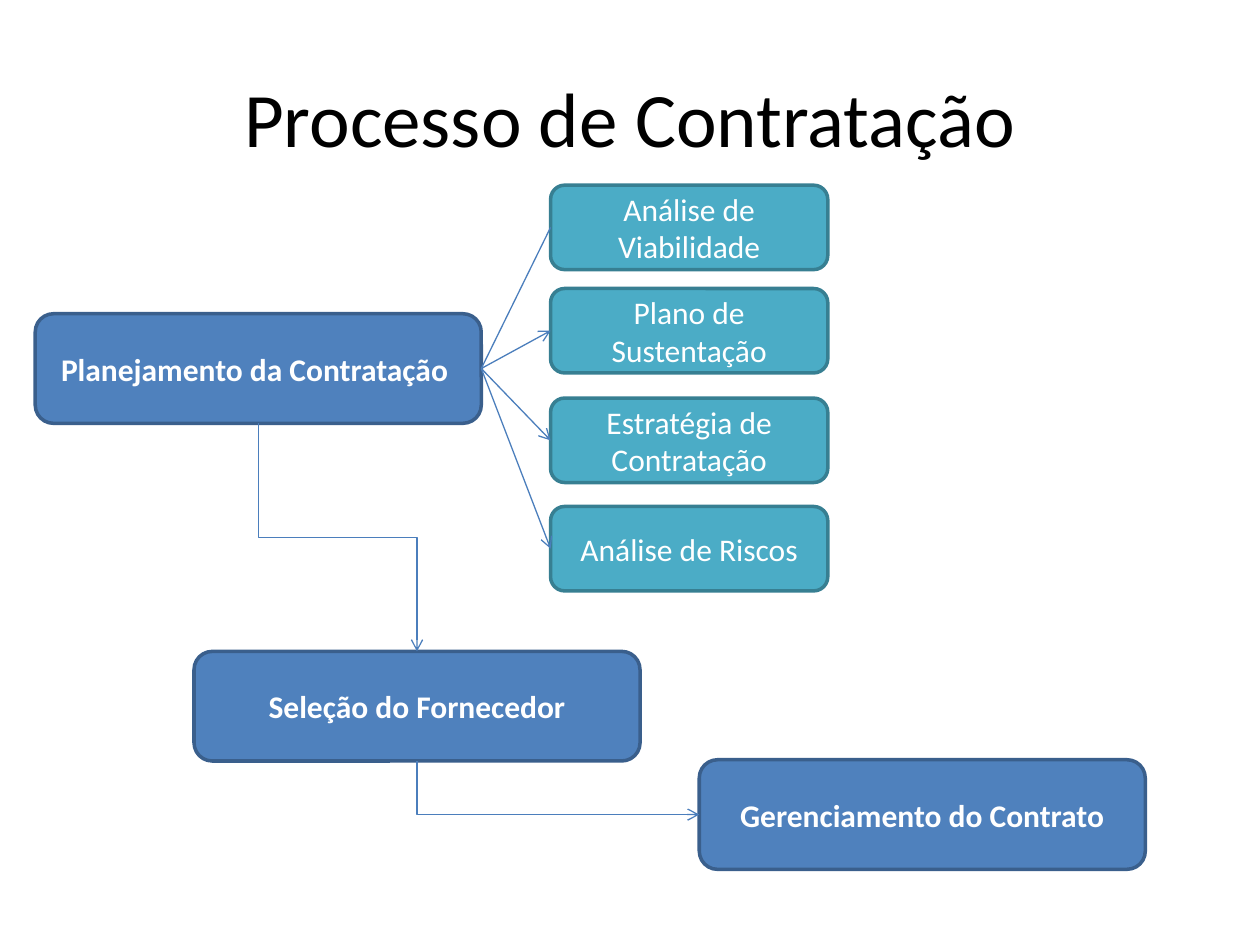
from lxml.etree import SubElement
from pptx import Presentation
from pptx.dml.color import RGBColor
from pptx.enum.shapes import MSO_CONNECTOR, MSO_SHAPE
from pptx.enum.text import MSO_ANCHOR, PP_ALIGN
from pptx.oxml.ns import qn
from pptx.util import Inches, Pt

COLORS = {
    "title": "000000",
    "text": "FFFFFF",
    "stage": "4F81BD",
    "stage_line": "3A5F8C",
    "document": "4BACC6",
    "document_line": "377F92",
    "connector": "4B7EBC",
}
FONT = "Calibri"
TOP, LEFT, BOTTOM, RIGHT = range(4)  # connection sites of a box

STAGE_SIZE = (3.54, 0.87)
STAGES = [
    ("Planejamento da Contratação ", 0.28, 2.49),
    ("Seleção do Fornecedor", 1.54, 5.17),
    ("Gerenciamento do Contrato", 5.55, 6.03),
]
DOCUMENT_SIZE = (2.2, 0.67)
DOCUMENT_LEFT = 4.37
DOCUMENTS = [
    ("Análise de Viabilidade", 1.47),
    ("Plano de Sustentação", 2.29),
    ("Estratégia de Contratação", 3.16),
    ("Análise de Riscos", 4.02),
]


def rgb(name):
    return RGBColor.from_string(COLORS[name])


def format_text(text_frame, size, color, bold=False):
    text_frame.word_wrap = True
    text_frame.vertical_anchor = MSO_ANCHOR.MIDDLE
    paragraph = text_frame.paragraphs[0]
    paragraph.alignment = PP_ALIGN.CENTER
    font = paragraph.runs[0].font
    font.name, font.size, font.bold = FONT, Pt(size), bold
    font.color.rgb = rgb(color)


def add_title(slide, left, top, width, height):
    title = slide.shapes.title
    title.left, title.top = Inches(left), Inches(top)
    title.width, title.height = Inches(width), Inches(height)
    title.text_frame.text = "Processo de Contratação"
    format_text(title.text_frame, 44, "title")


def add_box(slide, text, left, top, size, kind, bold=False):
    width, height = size
    shape = slide.shapes.add_shape(
        MSO_SHAPE.FLOWCHART_ALTERNATE_PROCESS,
        Inches(left), Inches(top), Inches(width), Inches(height))
    shape.shadow.inherit = False
    shape.fill.solid()
    shape.fill.fore_color.rgb = rgb(kind)
    shape.line.color.rgb = rgb(kind + "_line")
    shape.line.width = Pt(2)
    shape.text_frame.text = text
    format_text(shape.text_frame, 18, "text", bold)
    return shape


def connect(slide, kind, source, source_site, target, target_site, arrow=True):
    connector = slide.shapes.add_connector(kind, 0, 0, 0, 0)
    connector.begin_connect(source, source_site)
    connector.end_connect(target, target_site)
    connector.line.color.rgb = rgb("connector")
    connector.line.width = Pt(0.75)
    properties = connector.element.spPr
    if arrow:
        SubElement(properties.find(qn("a:ln")), qn("a:tailEnd"), type="arrow")
    SubElement(properties, qn("a:effectLst"))
    return connector


def connect_downward(slide, source, target, target_site, preset):
    """Elbow that leaves the bottom of source: turned 270 degrees and flipped."""
    connector = connect(slide, MSO_CONNECTOR.ELBOW, source, BOTTOM, target, target_site)
    left, top = connector.left, connector.top
    width, height = connector.width, connector.height
    connector.left = left + (width - height) // 2
    connector.top = top + (height - width) // 2
    connector.width, connector.height = height, width
    properties = connector.element.spPr
    transform = properties.find(qn("a:xfrm"))
    transform.set("rot", str(270 * 60000))
    transform.set("flipH", "1")
    properties.find(qn("a:prstGeom")).set("prst", preset)


def add_stages(slide):
    planning, selection, management = [
        add_box(slide, text, left, top, STAGE_SIZE, "stage", bold=True)
        for text, left, top in STAGES]
    connect_downward(slide, planning, selection, TOP, "bentConnector3")
    connect_downward(slide, selection, management, LEFT, "bentConnector2")
    return planning


def add_documents(slide, planning):
    boxes = [add_box(slide, text, DOCUMENT_LEFT, top, DOCUMENT_SIZE, "document")
             for text, top in DOCUMENTS]
    for index, box in enumerate(boxes):
        # The first line carries no arrowhead
        connect(slide, MSO_CONNECTOR.STRAIGHT, planning, RIGHT, box, LEFT, arrow=index > 0)


def main():
    presentation = Presentation()
    presentation.slide_width, presentation.slide_height = Inches(10), Inches(7.5)
    slide = presentation.slides.add_slide(presentation.slide_layouts[5])
    add_title(slide, 0.5, 0.3, 9, 1.25)
    planning = add_stages(slide)
    add_documents(slide, planning)
    presentation.save("out.pptx")


if __name__ == "__main__":
    main()
